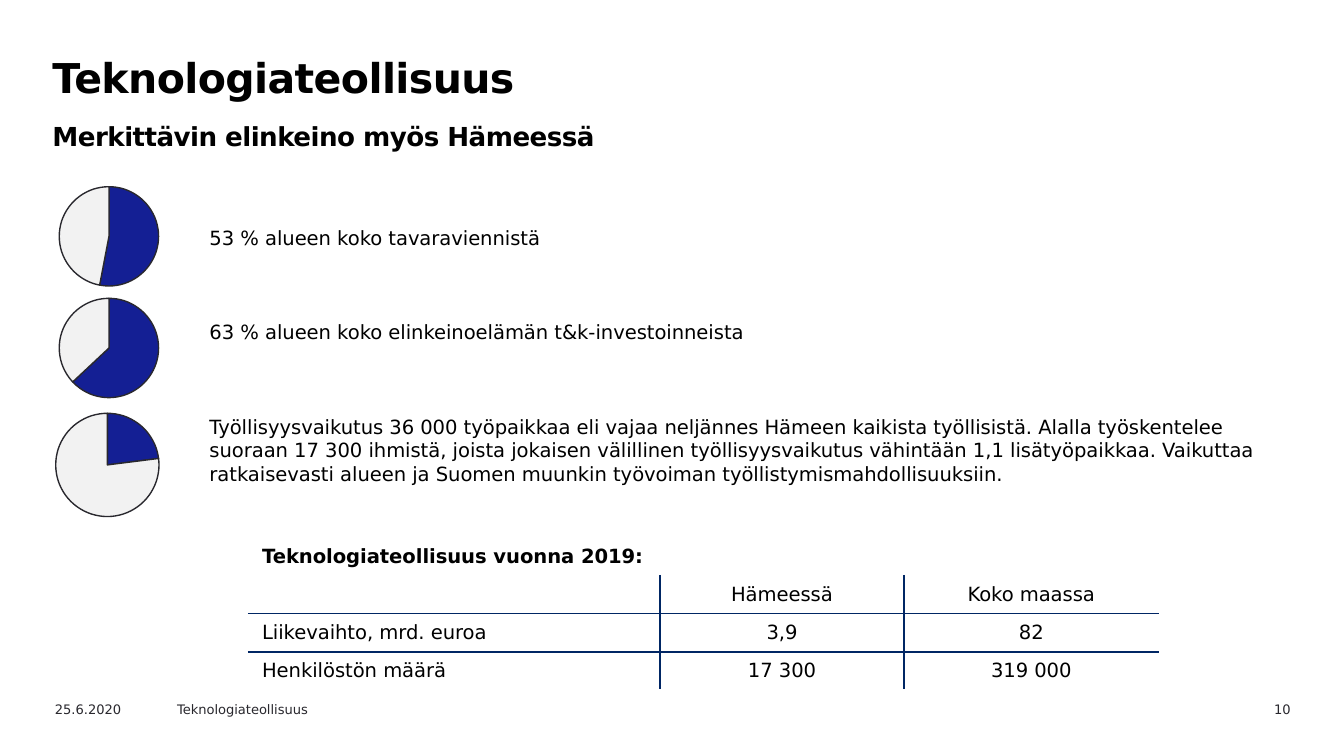
"""Build the slide on the technology industry in Häme."""
from lxml import etree
from pptx import Presentation
from pptx.chart.data import CategoryChartData
from pptx.dml.color import RGBColor
from pptx.enum.chart import XL_CHART_TYPE
from pptx.enum.text import MSO_ANCHOR, MSO_AUTO_SIZE, PP_ALIGN
from pptx.oxml import parse_xml
from pptx.oxml.ns import nsdecls, qn
from pptx.util import Cm, Pt

PIE = XL_CHART_TYPE.PIE
TOP, MIDDLE = MSO_ANCHOR.TOP, MSO_ANCHOR.MIDDLE
LEFT, CENTER, RIGHT = PP_ALIGN.LEFT, PP_ALIGN.CENTER, PP_ALIGN.RIGHT
NO_FIT = MSO_AUTO_SIZE.NONE

FONT = "DejaVu Sans"
COLORS = {"text": "000000", "muted": "29282E", "share": "141F94",
          "rest": "F2F2F2", "rule": "002664"}

TITLE = [("Teknologiateollisuus", 22), ("Merkittävin elinkeino myös Hämeessä", 14)]
FACTS = [
    "53 % alueen koko tavaraviennistä",
    "63 % alueen koko elinkeinoelämän t&k-investoinneista",
    "Työllisyysvaikutus 36 000 työpaikkaa eli vajaa neljännes Hämeen kaikista "
    "työllisistä. Alalla työskentelee suoraan 17 300 ihmistä, joista jokaisen "
    "välillinen työllisyysvaikutus vähintään 1,1 lisätyöpaikkaa. Vaikuttaa "
    "ratkaisevasti alueen ja Suomen muunkin työvoiman työllistymismahdollisuuksiin.",
]
PIES = [(53, 0.79, 3.2, 2.54), (63, 0.79, 5.31, 2.54), (23, 0.71, 7.47, 2.64)]
TABLE = [
    ["Teknologiateollisuus vuonna 2019:", "", ""],
    ["", "Hämeessä", "Koko maassa"],
    ["Liikevaihto, mrd. euroa", "3,9", "82"],
    ["Henkilöstön määrä", "17 300", "319 000"],
]
COL_WIDTHS = [7.77, 4.62, 4.8]
ROW_HEIGHT = 0.72
FOOTERS = [("25.6.2020", 0.79, 2.54, LEFT),
           ("Teknologiateollisuus", 3.1, 3.61, LEFT),
           ("10", 22.25, 2.39, RIGHT)]


def rgb(name):
    return RGBColor.from_string(COLORS[name])


def style(font, size, color="text", bold=False):
    font.name, font.size, font.bold = FONT, Pt(size), bold
    font.color.rgb = rgb(color)


def add_title(s):
    sp = s.shapes.title
    sp.left, sp.top, sp.width, sp.height = Cm(0.71), Cm(0.79), Cm(22.2), Cm(1.8)
    tf = sp.text_frame
    tf.auto_size, tf.vertical_anchor, tf.word_wrap = NO_FIT, TOP, True
    tf.margin_left, tf.margin_top = Cm(0.28), Cm(0.18)
    p = tf.paragraphs[0]
    p.alignment, p.line_spacing, p.space_before = LEFT, Pt(27), Pt(0)
    for i, (text, size) in enumerate(TITLE):
        if i:
            p.add_line_break()
        r = p.add_run()
        r.text = text
        style(r.font, size, bold=True)
        r.font._element.set("spc", "-30")


def add_text(s, lines, box, size, color, align=LEFT, gap=0):
    tf = s.shapes.add_textbox(*map(Cm, box)).text_frame
    tf.word_wrap = True
    for i, line in enumerate(lines):
        p = tf.add_paragraph() if i else tf.paragraphs[0]
        p.text, p.alignment = line, align
        p.space_before = Pt(gap if i else 0)
        style(p.font, size, color)


def add_pie(s, share, left, top, side):
    data = CategoryChartData()
    data.categories = ["1", "2"]
    data.add_series("Series 1", (share, 100 - share))
    box = map(Cm, (left, top, side, side))
    chart = s.shapes.add_chart(PIE, *box, data).chart
    chart.has_title = chart.has_legend = False
    style(chart.font, 18, "muted")
    plot = chart.plots[0]
    plot.vary_by_categories = False
    for i, color in enumerate(("share", "rest")):
        fmt = plot.series[0].points[i].format
        fmt.fill.solid()
        fmt.fill.fore_color.rgb = rgb(color)
        fmt.line.color.rgb = rgb("muted")
        fmt.line.width = Pt(0.75)
    area = chart.element.find(".//" + qn("c:plotArea"))
    for old in area.findall(qn("c:layout")):
        area.remove(old)
    area.insert(0, parse_xml(
        f'<c:layout {nsdecls("c")}><c:manualLayout><c:layoutTarget val="inner"/>'
        '<c:xMode val="edge"/><c:yMode val="edge"/><c:x val="0.13"/><c:y val="0.13"/>'
        '<c:w val="0.74"/><c:h val="0.74"/></c:manualLayout></c:layout>'))


def add_border(cell, side):
    cell._tc.get_or_add_tcPr().append(parse_xml(
        f'<a:ln{side} {nsdecls("a")} w="12700"><a:solidFill>'
        f'<a:srgbClr val="{COLORS["rule"]}"/></a:solidFill></a:ln{side}>'))


def add_table(s):
    rows, cols = len(TABLE), len(COL_WIDTHS)
    box = map(Cm, (4.7, 10.16, sum(COL_WIDTHS), rows * ROW_HEIGHT))
    table = s.shapes.add_table(rows, cols, *box).table
    table.first_row = table.horz_banding = False
    for column, width in zip(table.columns, COL_WIDTHS):
        column.width = Cm(width)
    for y, texts in enumerate(TABLE):
        table.rows[y].height = Cm(ROW_HEIGHT)
        for x, text in enumerate(texts):
            cell = table.cell(y, x)
            cell.vertical_anchor = MIDDLE
            cell.margin_top = cell.margin_bottom = 0
            p = cell.text_frame.paragraphs[0]
            p.alignment = CENTER if x else LEFT
            if text:
                p.text = text
                style(p.font, 10.5, bold=y == 0)
            else:
                etree.SubElement(p._p, qn("a:endParaRPr")).set("sz", "1050")
            edges = {"L": y and x, "R": y and x < cols - 1,
                     "T": y > 1, "B": 0 < y < rows - 1}
            for side, shown in edges.items():
                if shown:
                    add_border(cell, side)
            cell.fill.background()
    table.cell(0, 0).merge(table.cell(0, cols - 1))


def main():
    prs = Presentation()
    prs.slide_width, prs.slide_height = Cm(25.4), Cm(14.29)
    s = prs.slides.add_slide(prs.slide_layouts[5])
    add_title(s)
    add_text(s, FACTS, (3.71, 4.14, 20.8, 6.15), 10.5, "text", gap=38)
    for pie in PIES:
        add_pie(s, *pie)
    add_table(s)
    for text, left, width, align in FOOTERS:
        add_text(s, [text], (left, 13.13, width, 0.46), 7, "muted", align)
    prs.save("out.pptx")


if __name__ == "__main__":
    main()
